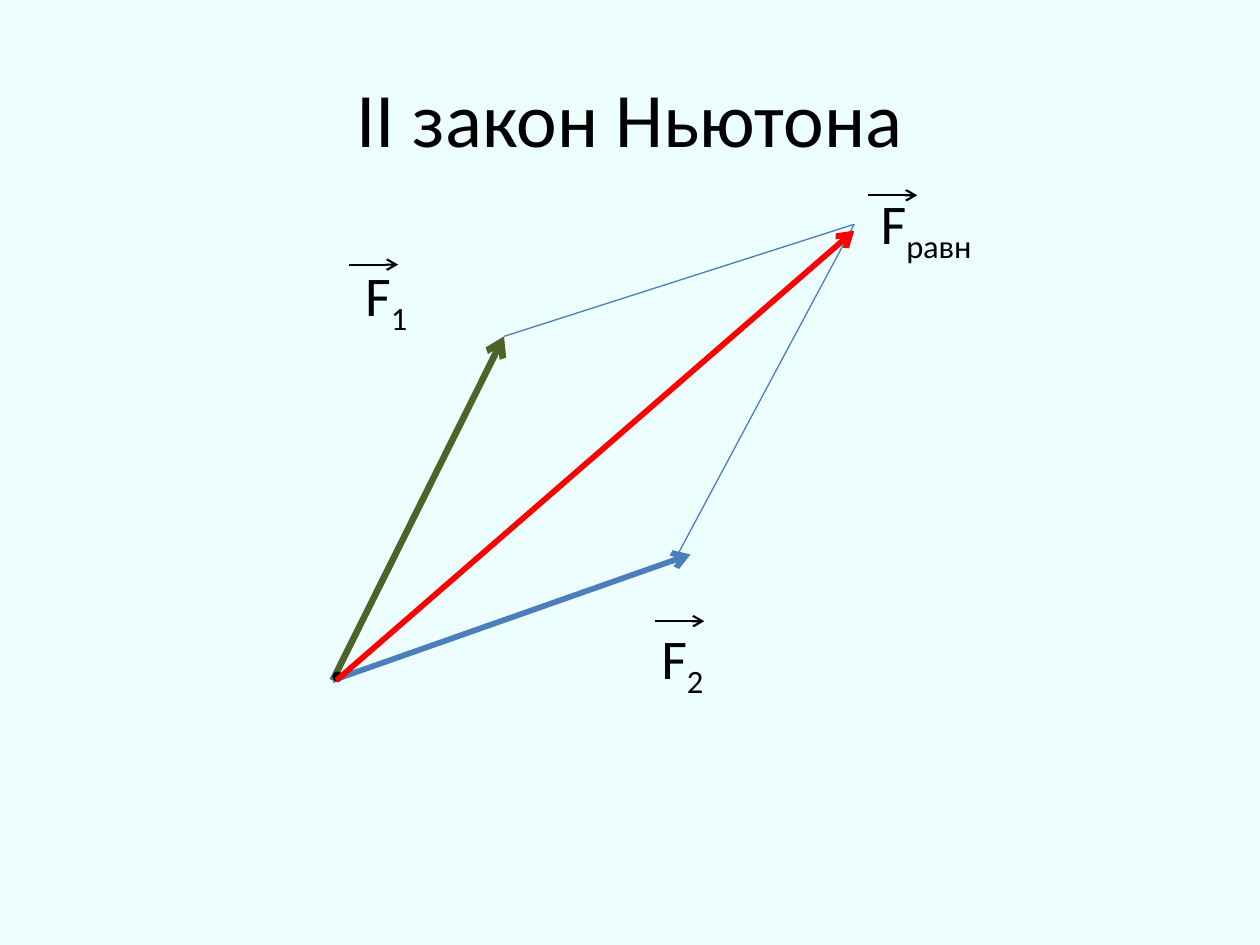
"""Builds a slide on Newton's second law with the parallelogram of forces."""
import pptx
import pptx.dml.color
import pptx.enum.shapes
import pptx.enum.text
import pptx.oxml
import pptx.oxml.ns
import pptx.util
from pptx.util import Inches

RGBColor = pptx.dml.color.RGBColor
BACKGROUND = RGBColor(0xEC, 0xFE, 0xFD)
BLACK = RGBColor(0, 0, 0)
GREEN = RGBColor(0x4F, 0x62, 0x28)
BLUE = RGBColor(0x4B, 0x7E, 0xBC)
RED = RGBColor(0xFF, 0, 0)
FONT = "Calibri"

ORIGIN = (2.64, 5.4)
FIRST_TIP = (4, 2.67)
SECOND_TIP = (5.48, 4.4)
CORNER = (6.78, 1.78)
VECTOR_MARK = 0.39


def add_run(paragraph, text, size):
    run = paragraph.add_run()
    run.text = text
    run.font.name = FONT
    run.font.size = pptx.util.Pt(size)
    run.font.color.rgb = BLACK
    return run


def add_title(slide, text):
    title = slide.shapes.title
    title.left, title.top = Inches(0.5), Inches(0.3)
    title.width, title.height = Inches(9), Inches(1.25)
    title.text_frame.vertical_anchor = pptx.enum.text.MSO_ANCHOR.MIDDLE
    paragraph = title.text_frame.paragraphs[0]
    paragraph.alignment = pptx.enum.text.PP_ALIGN.CENTER
    add_run(paragraph, text, 44)


def add_line(slide, start, end, color, width, arrow=False):
    line = slide.shapes.add_connector(
        pptx.enum.shapes.MSO_CONNECTOR.STRAIGHT,
        *(Inches(value) for value in (*start, *end)))
    line.line.color.rgb = color
    line.line.width = pptx.util.Pt(width)
    if arrow:
        head = pptx.oxml.parse_xml(
            f'<a:tailEnd {pptx.oxml.ns.nsdecls("a")} type="arrow"/>')
        line.line._get_or_add_ln().append(head)
    properties = line._element.spPr
    properties.append(pptx.oxml.parse_xml(
        f'<a:effectLst {pptx.oxml.ns.nsdecls("a")}/>'))


def add_origin_point(slide):
    point = slide.shapes.add_shape(
        pptx.enum.shapes.MSO_SHAPE.OVAL,
        Inches(2.64), Inches(5.33), Inches(0.08), Inches(0.08))
    point.shadow.inherit = False
    point.fill.solid()
    point.fill.fore_color.rgb = BLACK
    point.line.fill.background()


def add_force_label(slide, index, left, top, width, mark_start):
    label = slide.shapes.add_textbox(
        Inches(left), Inches(top), Inches(width), Inches(0.64))
    frame = label.text_frame
    frame.word_wrap = True
    frame.auto_size = pptx.enum.text.MSO_AUTO_SIZE.SHAPE_TO_FIT_TEXT
    paragraph = frame.paragraphs[0]
    add_run(paragraph, "F", 32)
    subscript = add_run(paragraph, index, 32)
    subscript._r.get_or_add_rPr().set("baseline", "-25000")
    mark_left, mark_top = mark_start
    add_line(slide, mark_start, (mark_left + VECTOR_MARK, mark_top),
             BLACK, 1.25, arrow=True)


def main():
    presentation = pptx.Presentation()
    presentation.slide_width = Inches(10)
    presentation.slide_height = Inches(7.5)
    slide = presentation.slides.add_slide(presentation.slide_layouts[5])
    slide.background.fill.solid()
    slide.background.fill.fore_color.rgb = BACKGROUND

    add_title(slide, "II закон Ньютона")
    add_line(slide, ORIGIN, FIRST_TIP, GREEN, 3.75, arrow=True)
    add_line(slide, ORIGIN, SECOND_TIP, BLUE, 3.25, arrow=True)
    add_origin_point(slide)
    add_line(slide, (5.39, 4.38), CORNER, BLUE, 0.75)
    add_line(slide, CORNER, FIRST_TIP, BLUE, 0.75)
    add_line(slide, (2.67, 5.4), (6.78, 1.83), RED, 3.25, arrow=True)

    add_force_label(slide, "1", 2.8, 2.02, 0.74, (2.77, 2.1))
    add_force_label(slide, "2", 5.15, 4.9, 0.66, (5.2, 4.93))
    add_force_label(slide, "равн", 6.89, 1.45, 1.13, (6.89, 1.55))
    presentation.save("out.pptx")


if __name__ == "__main__":
    main()
